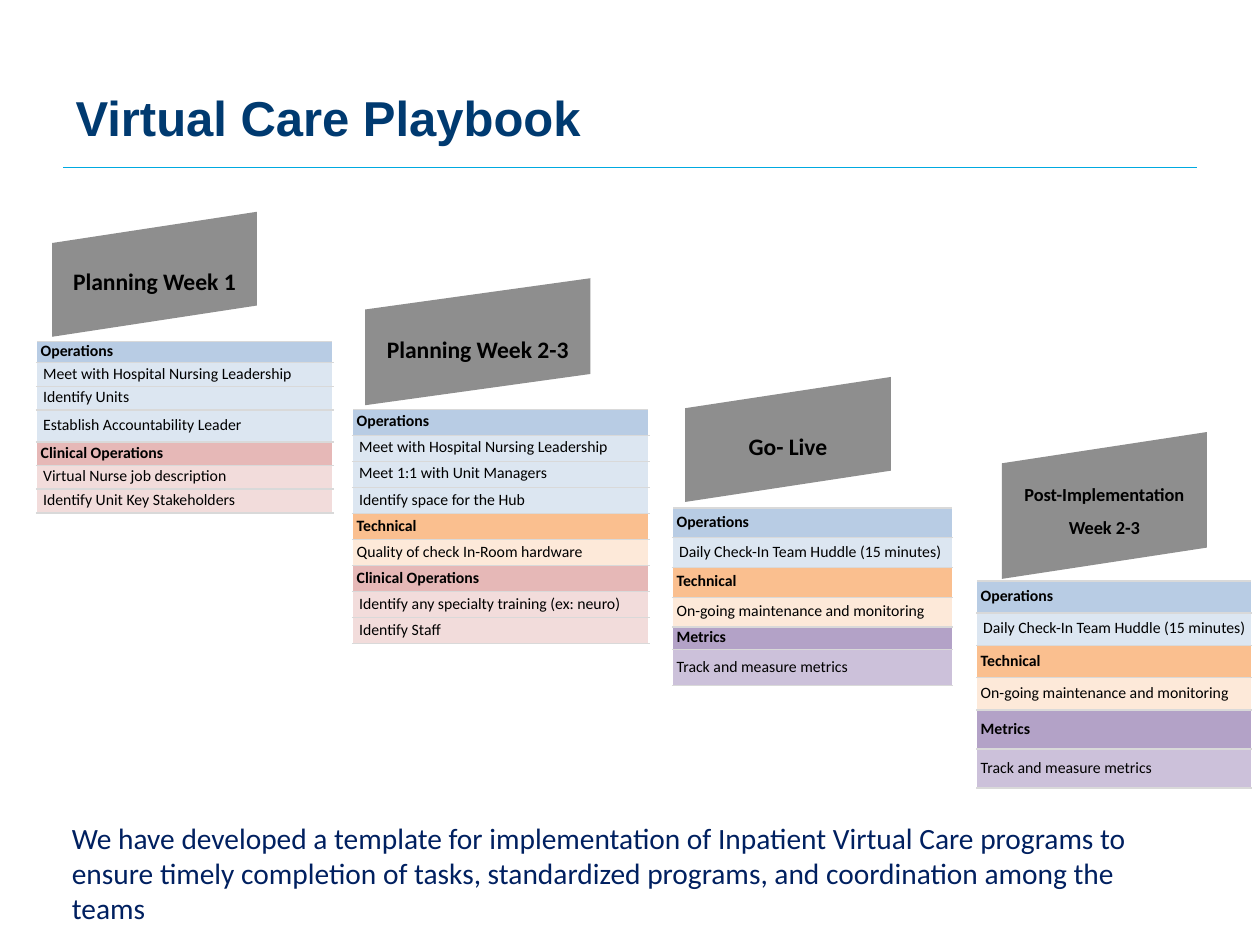
from dataclasses import dataclass

from lxml import etree
from pptx import Presentation
from pptx import util as u
from pptx.dml.color import RGBColor
from pptx.enum import shapes, text
from pptx.oxml.ns import qn


@dataclass(frozen=True)
class Theme:
    head: str = "Arial"
    body: str = "Calibri"
    navy: str = "003A70"
    note: str = "002060"
    rule: str = "00A9E0"
    flag: str = "8E8E8E"
    edge: str = "D9D9D9"
    ink: str = "000000"
    title: float = 28
    large: float = 16.8
    label: float = 13.5
    small: float = 10.5
    cell: float = 9


T = Theme()

GROUPS = {
    "Operations": ("B8CCE4", "DCE6F1", 0.13),
    "Technical": ("FABF8F", "FDE9D9", 0.08),
    "Clinical Operations": ("E6B8B7", "F2DCDB", 0.13),
    "Metrics": ("B3A2C7", "CCC1DA", 0.08),
}

HUDDLE = [
    ("Operations", ["Daily Check-In Team Huddle (15 minutes)"]),
    ("Technical", ["On-going maintenance and monitoring"]),
    ("Metrics", ["Track and measure metrics"]),
]

STAGES = [
    ("Planning Week 1", T.label, (1.05, 4.27, 4.13, 2.52),
     (0.74, 6.88, 5.97), [0.43, 0.48, 0.48, 0.64, 0.47, 0.48, 0.48],
     [("Operations", ["Meet with Hospital Nursing Leadership",
                      "Identify Units",
                      "Establish Accountability Leader"]),
      ("Clinical Operations", ["Virtual Nurse job description",
                               "Identify Unit Key Stakeholders"])]),
    ("Planning Week 2-3", T.label, (7.36, 5.61, 4.54, 2.56),
     (7.11, 8.25, 5.97), [0.525] * 9,
     [("Operations", ["Meet with Hospital Nursing Leadership",
                      "Meet 1:1 with Unit Managers",
                      "Identify space for the Hub"]),
      ("Technical", ["Quality of check In-Room hardware"]),
      ("Clinical Operations", ["Identify any specialty training (ex: neuro)",
                               "Identify Staff"])]),
    ("Go- Live", T.label, (13.81, 7.6, 4.15, 2.52),
     (13.56, 10.24, 5.64), [0.6] * 4 + [0.45, 0.73], HUDDLE),
    ("Post-Implementation Week 2-3", T.small, (20.2, 8.71, 4.13, 2.96),
     (19.69, 11.71, 5.54), [0.65] * 4 + [0.79, 0.79], HUDDLE),
]


def rgb(code):
    return RGBColor.from_string(code)


def style(para, size, color, face=T.body, bold=False):
    for run in para.runs:
        font = run.font
        font.size, font.name, font.bold = u.Pt(size), face, bold
        font.color.rgb = rgb(color)


def add_title(slide, words):
    box = slide.shapes.title
    box.left, box.top = u.Cm(1.27), u.Cm(0.76)
    box.width, box.height = u.Cm(22.86), u.Cm(3.18)
    frame = box.text_frame
    frame.text = words
    frame.vertical_anchor = text.MSO_ANCHOR.MIDDLE
    para = frame.paragraphs[0]
    para.alignment = text.PP_ALIGN.LEFT
    style(para, T.title, T.navy, T.head, True)


def add_rule(slide):
    line = slide.shapes.add_connector(
        shapes.MSO_CONNECTOR.STRAIGHT,
        u.Cm(1.27), u.Cm(3.37), u.Cm(24.13), u.Cm(3.37))
    line.line.color.rgb = rgb(T.rule)
    line.line.width = u.Pt(0.75)
    etree.SubElement(line._element.spPr, qn("a:effectLst"))


def add_flag(slide, words, size, left, top, wide, high, rise=0.63):
    right, base = left + wide, top + high
    pen = slide.shapes.build_freeform(u.Cm(left), u.Cm(top + rise))
    pen.add_line_segments([
        (u.Cm(right), u.Cm(top)),
        (u.Cm(right), u.Cm(base - rise)),
        (u.Cm(left), u.Cm(base)),
    ])
    flag = pen.convert_to_shape()
    flag.shadow.inherit = False
    flag.fill.solid()
    flag.fill.fore_color.rgb = rgb(T.flag)
    flag.line.fill.background()
    frame = flag.text_frame
    frame.word_wrap = True
    frame.vertical_anchor = text.MSO_ANCHOR.MIDDLE
    frame.text = words
    para = frame.paragraphs[0]
    para.alignment = text.PP_ALIGN.CENTER
    para.line_spacing = 1.5
    style(para, size, T.ink, bold=True)


def add_edge(cell, side):
    props = cell._tc.get_or_add_tcPr()
    line = etree.SubElement(props, qn("a:" + side), w=str(u.Pt(1)))
    fill = etree.SubElement(line, qn("a:solidFill"))
    etree.SubElement(fill, qn("a:srgbClr"), val=T.edge)


def fill_cell(cell, words, color, inset, bold):
    cell.text = words
    cell.vertical_anchor = text.MSO_ANCHOR.MIDDLE
    cell.margin_left, cell.margin_right = u.Cm(inset), 0
    cell.margin_top, cell.margin_bottom = 0, u.Cm(0.03)
    for side in ("lnT", "lnB"):
        add_edge(cell, side)
    cell.fill.solid()
    cell.fill.fore_color.rgb = rgb(color)
    style(cell.text_frame.paragraphs[0], T.cell, T.ink, bold=bold)


def add_tasks(slide, left, top, wide, highs, groups):
    rows = []
    for name, tasks in groups:
        dark, light, inset = GROUPS[name]
        rows.append((name, dark, 0.08, True))
        rows += [(task, light, inset, False) for task in tasks]
    grid = slide.shapes.add_table(
        len(rows), 1, u.Cm(left), u.Cm(top), u.Cm(wide), u.Cm(sum(highs))).table
    grid.first_row = grid.horz_banding = False
    for i, (row, high) in enumerate(zip(rows, highs)):
        grid.rows[i].height = u.Cm(high)
        fill_cell(grid.cell(i, 0), *row)


def add_note(slide, words):
    box = slide.shapes.add_textbox(
        u.Cm(1.27), u.Cm(16.43), u.Cm(22.86), u.Cm(1.98))
    frame = box.text_frame
    frame.word_wrap = True
    frame.margin_left = frame.margin_right = u.Cm(0.18)
    frame.margin_top = frame.margin_bottom = u.Cm(0.1)
    frame.text = words
    style(frame.paragraphs[0], T.large, T.note)


def main():
    deck = Presentation()
    deck.slide_width, deck.slide_height = u.Cm(25.4), u.Cm(19.05)
    slide = deck.slides.add_slide(deck.slide_layouts[5])
    add_rule(slide)
    add_title(slide, "Virtual Care Playbook")
    for words, size, flag, place, highs, groups in STAGES:
        add_flag(slide, words, size, *flag)
        add_tasks(slide, *place, highs, groups)
    add_note(slide, "We have developed a template for implementation of "
                    "Inpatient Virtual Care programs to ensure timely "
                    "completion of tasks, standardized programs, and "
                    "coordination among the teams")
    deck.save("out.pptx")


if __name__ == "__main__":
    main()
